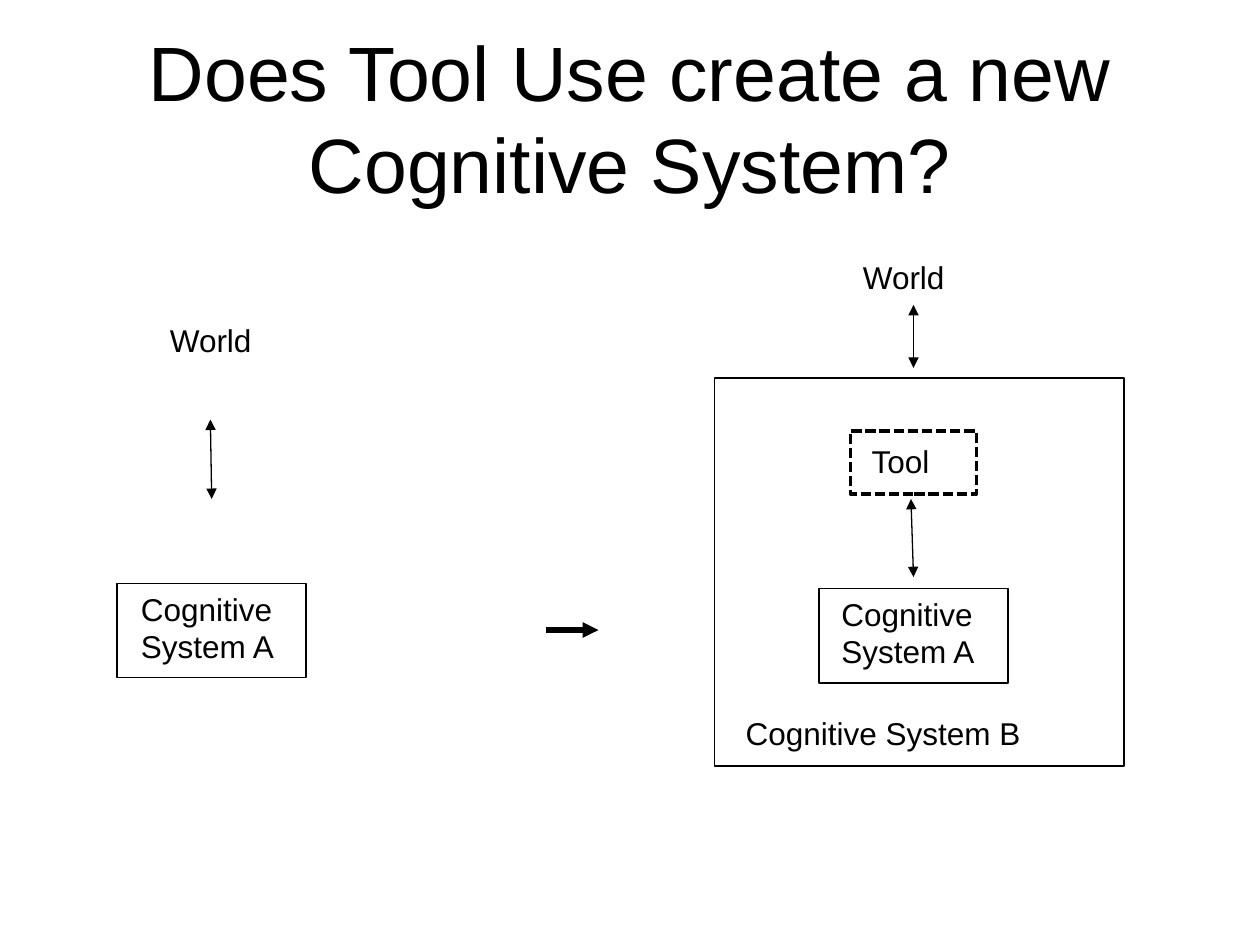
from lxml import etree
from pptx import Presentation
from pptx.dml.color import RGBColor
from pptx.enum.dml import MSO_LINE_DASH_STYLE as DASH
from pptx.enum.shapes import MSO_CONNECTOR, MSO_SHAPE
from pptx.enum.text import MSO_ANCHOR, MSO_AUTO_SIZE, PP_ALIGN
from pptx.oxml.ns import qn
from pptx.util import Inches, Pt


def color(value):
    return RGBColor.from_string(value)


def write(tf, lines, size, align):
    """Fill a text frame with one black Arial paragraph per line."""
    for i, line in enumerate(lines):
        p = tf.paragraphs[0] if i == 0 else tf.add_paragraph()
        p.alignment = align
        r = p.add_run()
        r.text = line
        r.font.name, r.font.size = "Arial", Pt(size)
        r.font.color.rgb = color(BLACK)


BLACK = "000000"

prs = Presentation()
prs.slide_width, prs.slide_height = Inches(10), Inches(7.5)
s = prs.slides.add_slide(prs.slide_layouts[5])

title = s.shapes.title
title.left, title.top = Inches(0.5), Inches(0.3)
title.width, title.height = Inches(9), Inches(1.25)
title.text_frame.word_wrap = True
title.text_frame.auto_size = MSO_AUTO_SIZE.NONE
title.text_frame.vertical_anchor = MSO_ANCHOR.MIDDLE
write(title.text_frame, ["Does Tool Use create a new Cognitive System?"], 44, PP_ALIGN.CENTER)

# Boxes: left, top, width, height, line width, dash
boxes = [
    (5.67, 3, 3.25, 3.08, 0.75, None),        # Cognitive System B
    (0.93, 4.63, 1.5, 0.75, 0.75, None),      # Cognitive System A alone
    (6.5, 4.67, 1.5, 0.75, 0.75, None),       # Cognitive System A inside B
    (6.75, 3.42, 1, 0.5, 2, DASH.SQUARE_DOT),  # Tool
]
for left, top, width, height, weight, dash in boxes:
    sp = s.shapes.add_shape(MSO_SHAPE.RECTANGLE, Inches(left), Inches(top),
                            Inches(width), Inches(height))
    sp.shadow.inherit = False
    sp.fill.background()
    sp.line.color.rgb = color(BLACK)
    sp.line.width = Pt(weight)
    if dash:
        sp.line.dash_style = dash

# Labels: left, top, width, height, lines
labels = [
    (1.25, 2.5, 0.85, 0.4, ["World"]),
    (1.02, 4.63, 1.27, 0.7, ["Cognitive", "System A"]),
    (6.75, 2, 0.85, 0.4, ["World"]),
    (6.82, 3.46, 0.66, 0.4, ["Tool"]),
    (6.58, 4.67, 1.27, 0.7, ["Cognitive", "System A"]),
    (5.82, 5.62, 2.38, 0.4, ["Cognitive System B"]),
]
for left, top, width, height, lines in labels:
    tf = s.shapes.add_textbox(Inches(left), Inches(top), Inches(width), Inches(height)).text_frame
    tf.word_wrap = False
    tf.auto_size = MSO_AUTO_SIZE.SHAPE_TO_FIT_TEXT
    write(tf, lines, 18, PP_ALIGN.LEFT)

# Arrows: from x, y, to x, y, line width, ends with an arrowhead
arrows = [
    (1.68, 3.96, 1.67, 3.33, 0.75, ("headEnd", "tailEnd")),
    (7.25, 2.92, 7.25, 2.42, 0.75, ("headEnd", "tailEnd")),
    (7.25, 4.58, 7.23, 3.96, 0.75, ("headEnd", "tailEnd")),
    (4.33, 5, 4.75, 5, 3, ("tailEnd",)),
]
for x1, y1, x2, y2, weight, ends in arrows:
    arrow = s.shapes.add_connector(MSO_CONNECTOR.STRAIGHT, Inches(x1), Inches(y1),
                                   Inches(x2), Inches(y2))
    arrow.line.color.rgb = color(BLACK)
    arrow.line.width = Pt(weight)
    ln = arrow.line._get_or_add_ln()
    for end in ends:
        etree.SubElement(ln, qn(f"a:{end}"), type="triangle")
    etree.SubElement(arrow._element.spPr, qn("a:effectLst"))

prs.save("out.pptx")
